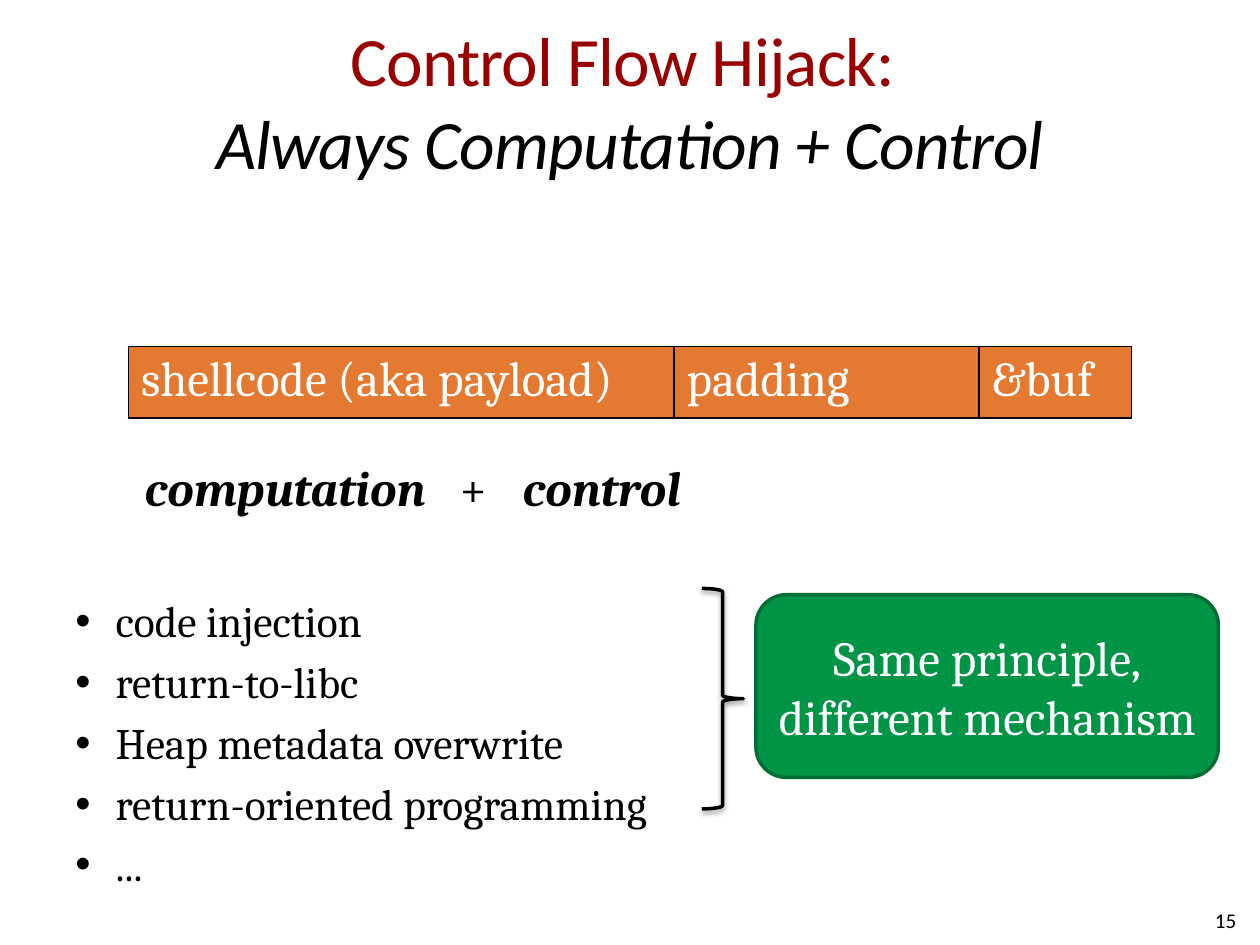
from lxml.etree import SubElement
from pptx import Presentation
from pptx.dml.color import RGBColor
from pptx.enum.shapes import MSO_SHAPE
from pptx.enum.text import MSO_ANCHOR, MSO_AUTO_SIZE, PP_ALIGN
from pptx.oxml import parse_xml
from pptx.oxml.ns import nsdecls, qn
from pptx.util import Inches, Pt

BLACK = RGBColor(0x00, 0x00, 0x00)
WHITE = RGBColor(0xFF, 0xFF, 0xFF)
RED = RGBColor(0x99, 0x00, 0x00)
ORANGE = RGBColor(0xE4, 0x79, 0x32)
GREEN = RGBColor(0x00, 0x94, 0x46)
DARK_GREEN = RGBColor(0x00, 0x6D, 0x34)

TITLE = [("Control Flow Hijack: \v", RED, False), ("Always Computation + Control", BLACK, True)]
BUFFER = [("shellcode (aka payload)", 4.33), ("padding", 2.42), ("&buf", 1.21)]
EQUATION = [("computation", True), ("\t+", False), ("\tcontrol", True)]
EQUATION_TABS = [4.58, 7.0]
ATTACKS = ["code injection", "return-to-libc", "Heap metadata overwrite",
           "return-oriented programming", "..."]
PRINCIPLE = "Same principle,\vdifferent mechanism"
PAGE = "15"


def style(r, size, color=BLACK, font="Cambria", bold=False, italic=False):
    """Format one run."""
    r.font.name, r.font.size = font, Pt(size)
    r.font.bold, r.font.italic = bold, italic
    r.font.color.rgb = color


def add_text(s, x, y, w, h):
    """Add a wrapping text box and return its text frame."""
    tf = s.shapes.add_textbox(Inches(x), Inches(y), Inches(w), Inches(h)).text_frame
    tf.word_wrap = True
    return tf


def add_title(s):
    """Fill and place the title placeholder."""
    sp = s.shapes.title
    sp.left, sp.top, sp.width, sp.height = Inches(0.5), Inches(0.17), Inches(9), Inches(1.25)
    tf = sp.text_frame
    tf.auto_size, tf.vertical_anchor = MSO_AUTO_SIZE.NONE, MSO_ANCHOR.MIDDLE
    tf.margin_left = tf.margin_right = 0
    p = tf.paragraphs[0]
    p.text = "".join(text for text, _, _ in TITLE)
    p.alignment = PP_ALIGN.CENTER
    for r, (_, color, italic) in zip(p.runs, TITLE):
        style(r, 39.6, color, "Calibri", italic=italic)
        r.font._element.set("spc", "-50")


def add_buffer(s):
    """Draw the buffer layout as a one-row table."""
    total = sum(width for _, width in BUFFER)
    table = s.shapes.add_table(1, len(BUFFER), Inches(1.02), Inches(2.75),
                               Inches(total), Inches(0.55)).table
    for i, (text, width) in enumerate(BUFFER):
        table.columns[i].width = Inches(width)
        cell = table.cell(0, i)
        cell.text = text
        style(cell.text_frame.paragraphs[0].runs[0], 28, WHITE)
        tcPr = cell._tc.get_or_add_tcPr()
        for side in ("lnL", "lnR", "lnT", "lnB"):
            tcPr.append(parse_xml(
                f'<a:{side} {nsdecls("a")} w="12700"><a:solidFill>'
                f'<a:srgbClr val="{BLACK}"/></a:solidFill></a:{side}>'))
        cell.fill.solid()
        cell.fill.fore_color.rgb = ORANGE


def add_equation(s):
    """Write computation + control on tab stops."""
    p = add_text(s, 0.5, 3.58, 9, 0.7).paragraphs[0]
    p.space_before = Pt(5.6)
    for text, strong in EQUATION:
        r = p.add_run()
        r.text = text
        style(r, 28, bold=strong, italic=strong)
    pPr = p._p.get_or_add_pPr()
    pPr.set("marL", str(Inches(0.55)))
    pPr.set("indent", "0")
    tabs = SubElement(pPr, qn("a:tabLst"))
    for pos in EQUATION_TABS:
        SubElement(tabs, qn("a:tab"), pos=str(Inches(pos)), algn="l")


def add_attacks(s):
    """Write the bulleted list of attacks."""
    tf = add_text(s, 0.5, 4.67, 5, 2.17)
    tf.text = "\n".join(ATTACKS)
    for p in tf.paragraphs:
        p.space_before = Pt(5)
        style(p.runs[0], 24.8)
        pPr = p._p.get_or_add_pPr()
        pPr.set("marL", str(Inches(0.32)))
        pPr.set("indent", str(-Inches(0.32)))
        SubElement(pPr, qn("a:buFont"), typeface="Arial")
        SubElement(pPr, qn("a:buChar"), char="•")


def add_principle(s):
    """Draw the brace and the conclusion box."""
    brace = s.shapes.add_shape(MSO_SHAPE.RIGHT_BRACE, Inches(5.57), Inches(4.67),
                               Inches(0.33), Inches(1.75))
    brace.fill.background()
    brace.line.color.rgb, brace.line.width = BLACK, Pt(2)
    brace._element.spPr.append(parse_xml(
        f'<a:effectLst {nsdecls("a")}><a:outerShdw blurRad="{Pt(3.1)}" dist="{Pt(1.6)}" '
        f'dir="5400000" rotWithShape="0"><a:srgbClr val="{BLACK}"><a:alpha val="38000"/>'
        '</a:srgbClr></a:outerShdw></a:effectLst>'))

    box = s.shapes.add_shape(MSO_SHAPE.ROUNDED_RECTANGLE, Inches(6), Inches(4.72),
                             Inches(3.67), Inches(1.45))
    box.shadow.inherit = False
    box.fill.solid()
    box.fill.fore_color.rgb = GREEN
    box.line.color.rgb, box.line.width = DARK_GREEN, Pt(2)
    tf = box.text_frame
    tf.vertical_anchor = MSO_ANCHOR.MIDDLE
    p = tf.paragraphs[0]
    p.text = PRINCIPLE
    p.alignment = PP_ALIGN.CENTER
    for r in p.runs:
        style(r, 28, WHITE)


def add_page(s):
    """Write the page number."""
    tf = add_text(s, 7.58, 7.1, 2.33, 0.4)
    tf.vertical_anchor = MSO_ANCHOR.MIDDLE
    tf.text = PAGE
    p = tf.paragraphs[0]
    p.alignment = PP_ALIGN.RIGHT
    style(p.runs[0], 12, font="Calibri")


def main():
    """Build the slide on control flow hijacks."""
    prs = Presentation()
    prs.slide_width, prs.slide_height = Inches(10), Inches(7.5)
    s = prs.slides.add_slide(prs.slide_layouts[5])
    for add_part in (add_title, add_equation, add_buffer, add_page, add_attacks, add_principle):
        add_part(s)
    prs.save("out.pptx")


if __name__ == "__main__":
    main()
